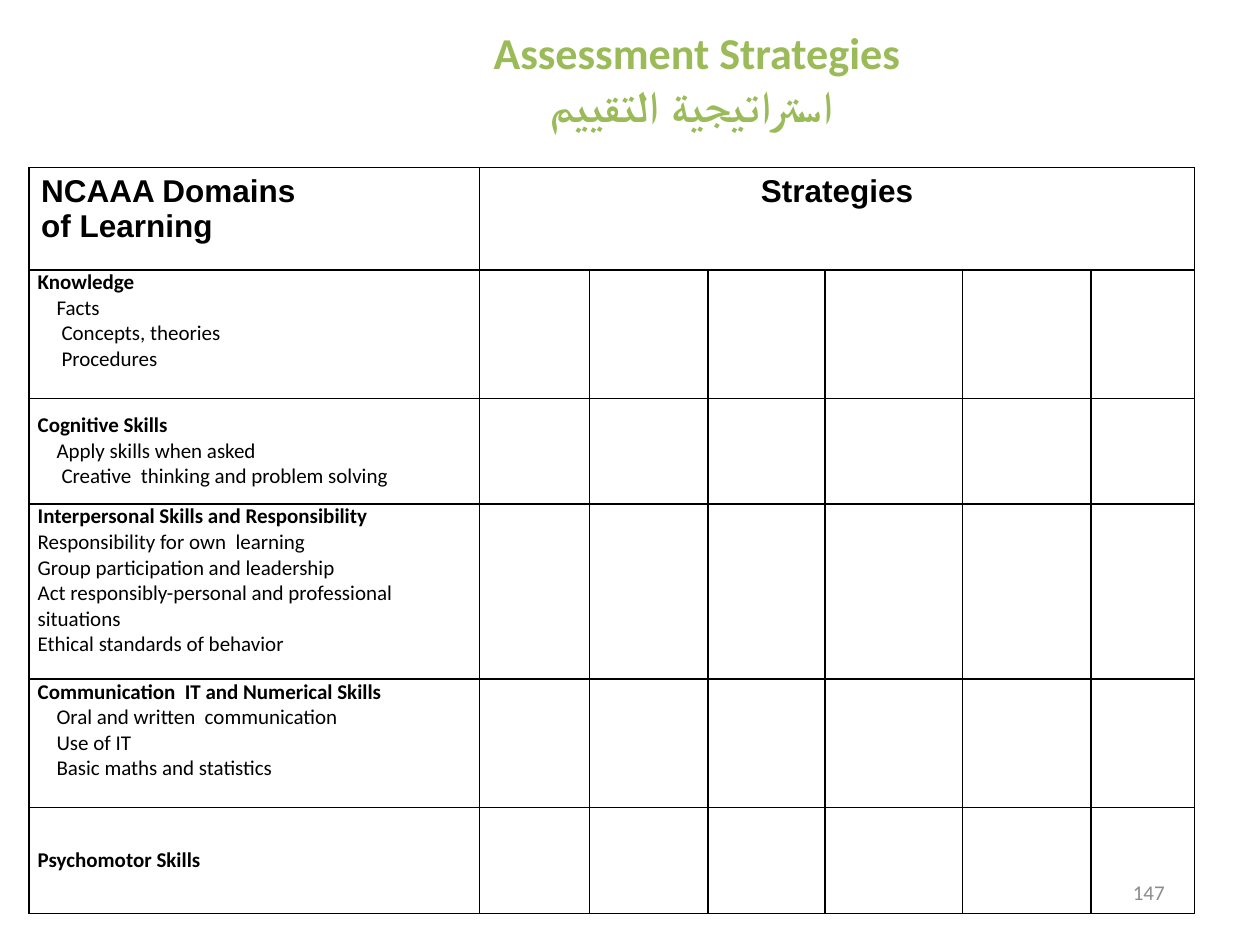
from lxml import etree
from pptx import Presentation
from pptx.dml.color import RGBColor
from pptx.enum import text
from pptx.oxml import ns
from pptx.util import Cm, Pt

BLACK = "000000"
COLUMN_WIDTHS = [9.09, 2.21, 2.39, 2.36, 2.77, 2.59, 2.09]
ROW_HEIGHTS = [2.06, 2.59, 2.13, 3.53, 2.59, 2.13]
TOP, MIDDLE = text.MSO_ANCHOR.TOP, text.MSO_ANCHOR.MIDDLE
DOMAINS = [
    (TOP, "Knowledge",
     [(0.38, "Facts"), (0.48, "Concepts, theories"), (0.48, "Procedures")]),
    (MIDDLE, "Cognitive Skills",
     [(0.38, "Apply skills when asked"),
      (0.48, "Creative  thinking and problem solving")]),
    (TOP, "Interpersonal Skills and Responsibility",
     [(0, "Responsibility for own  learning"),
      (0, "Group participation and leadership"),
      (0, "Act responsibly-personal and professional situations"),
      (0, "Ethical standards of behavior")]),
    (TOP, "Communication  IT and Numerical Skills",
     [(0.38, "Oral and written  communication"),
      (0.38, "Use of IT"),
      (0.38, "Basic maths and statistics")]),
    (MIDDLE, "Psychomotor Skills", []),
]


def color(hex_value):
    return RGBColor.from_string(hex_value)


def add_run(paragraph, wording, size, font="Calibri", bold=False, hex_value=BLACK):
    run = paragraph.add_run()
    run.text = wording
    run.font.name = font
    run.font.size = Pt(size)
    run.font.bold = bold
    run.font.color.rgb = color(hex_value)


def add_title(slide):
    title = slide.shapes.title
    title.left, title.top, title.width, title.height = Cm(5.16), Cm(0.41), Cm(17.78), Cm(2.34)
    frame = title.text_frame
    frame.auto_size = text.MSO_AUTO_SIZE.NONE
    frame.vertical_anchor = MIDDLE
    heading = frame.paragraphs[0]
    heading.alignment = text.PP_ALIGN.CENTER
    add_run(heading, "Assessment Strategies", 25.2, bold=True, hex_value="9BBB59")
    heading.add_line_break()
    add_run(heading, "استراتيجية التقييم ", 25.2, bold=True, hex_value="9BBB59")


def set_borders(cell):
    properties = cell._tc.get_or_add_tcPr()
    for position, side in enumerate(("lnL", "lnR", "lnT", "lnB")):
        line = etree.Element(ns.qn(f"a:{side}"), w=str(Pt(1)))
        fill = etree.SubElement(line, ns.qn("a:solidFill"))
        etree.SubElement(fill, ns.qn("a:srgbClr"), val=BLACK)
        properties.insert(position, line)


def set_margins(cell, horizontal, vertical):
    cell.margin_left = cell.margin_right = Cm(horizontal)
    cell.margin_top = cell.margin_bottom = Cm(vertical)


def fill_header(cell, lines, alignment):
    set_margins(cell, 0.25, 0.13)
    for number, line in enumerate(lines):
        paragraph = cell.text_frame.add_paragraph() if number else cell.text_frame.paragraphs[0]
        paragraph.alignment = alignment
        add_run(paragraph, line, 18, font="Arial", bold=True)


def fill_domain(cell, anchor, domain, skills):
    cell.vertical_anchor = anchor
    add_run(cell.text_frame.paragraphs[0], domain, 12, bold=True)
    for indent, skill in skills:
        paragraph = cell.text_frame.add_paragraph()
        paragraph._p.get_or_add_pPr().set("marL", str(Cm(indent)))
        add_run(paragraph, skill, 12)


def add_strategy_table(slide):
    grid = slide.shapes.add_table(
        len(ROW_HEIGHTS), len(COLUMN_WIDTHS), Cm(0.58), Cm(3.38),
        Cm(sum(COLUMN_WIDTHS)), Cm(sum(ROW_HEIGHTS))).table
    grid.first_row = grid.horz_banding = False
    for column, width in zip(grid.columns, COLUMN_WIDTHS):
        column.width = Cm(width)
    for row, height in zip(grid.rows, ROW_HEIGHTS):
        row.height = Cm(height)
    for cell in grid.iter_cells():
        cell.fill.background()
        set_margins(cell, 0.18, 0)
        set_borders(cell)
    grid.cell(0, 1).merge(grid.cell(0, len(COLUMN_WIDTHS) - 1))
    fill_header(grid.cell(0, 0), ["NCAAA Domains", "of Learning"], text.PP_ALIGN.LEFT)
    fill_header(grid.cell(0, 1), ["Strategies"], text.PP_ALIGN.CENTER)
    for row, domain in enumerate(DOMAINS, start=1):
        fill_domain(grid.cell(row, 0), *domain)


def add_page_number(slide):
    frame = slide.shapes.add_textbox(Cm(20.12), Cm(17.35), Cm(3.61), Cm(1.27)).text_frame
    frame.word_wrap = True
    frame.vertical_anchor = MIDDLE
    number = frame.paragraphs[0]
    number.alignment = text.PP_ALIGN.RIGHT
    add_run(number, "147", 12, hex_value="8C8C8C")


def main():
    deck = Presentation()
    deck.slide_width, deck.slide_height = Cm(25.4), Cm(19.05)
    slide = deck.slides.add_slide(deck.slide_layouts[5])
    add_title(slide)
    add_strategy_table(slide)
    add_page_number(slide)
    deck.save("out.pptx")


if __name__ == "__main__":
    main()
